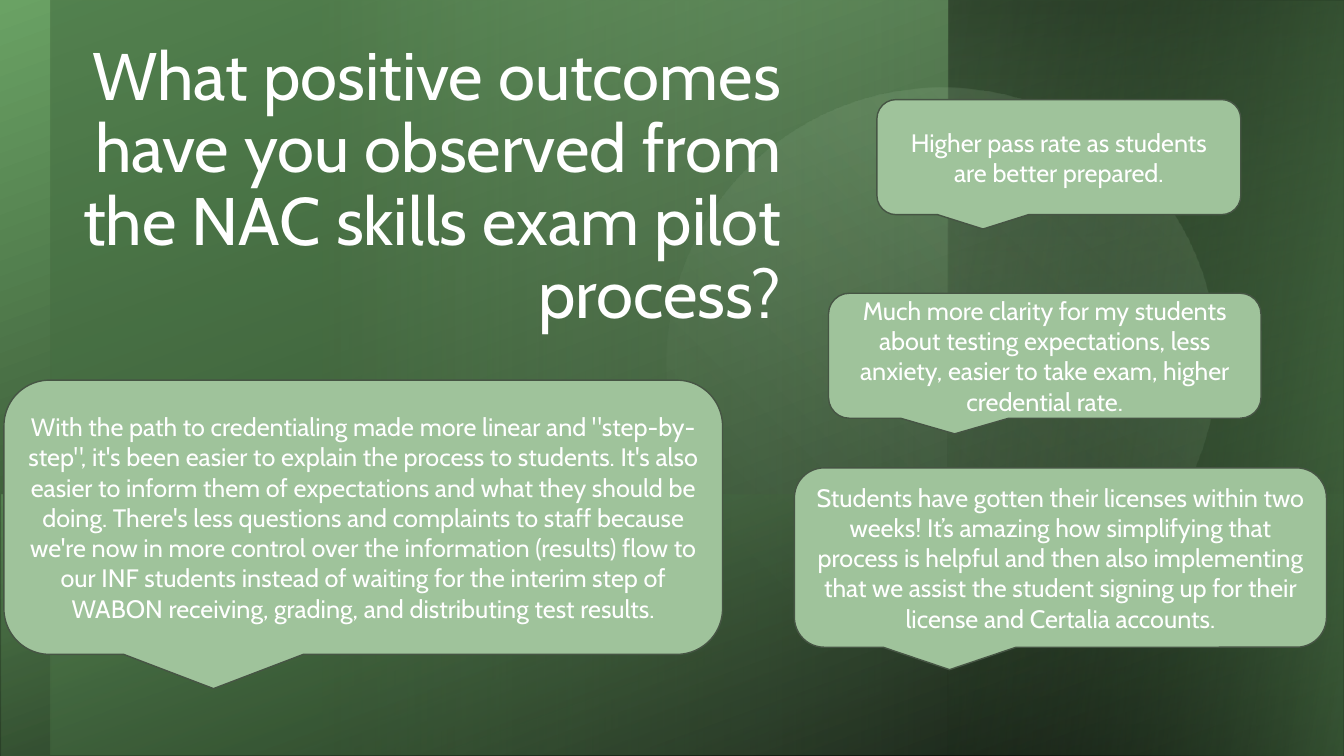
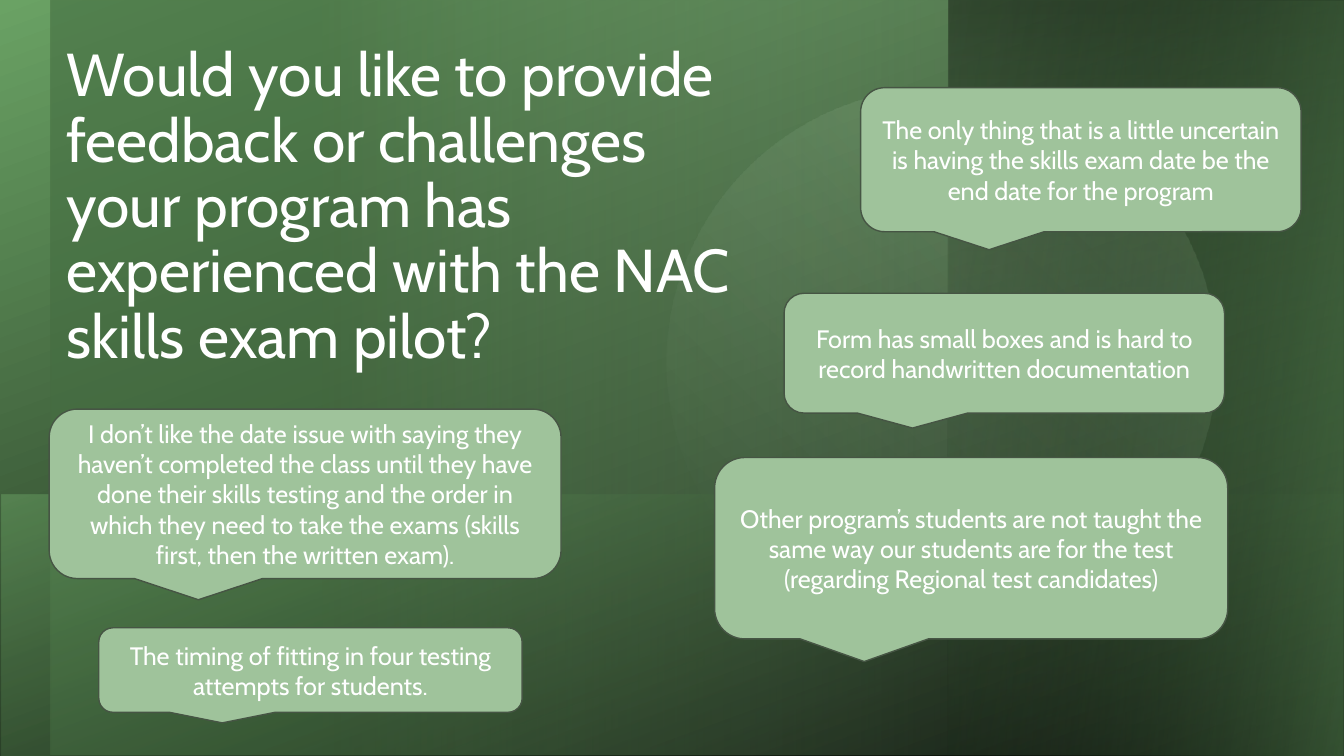
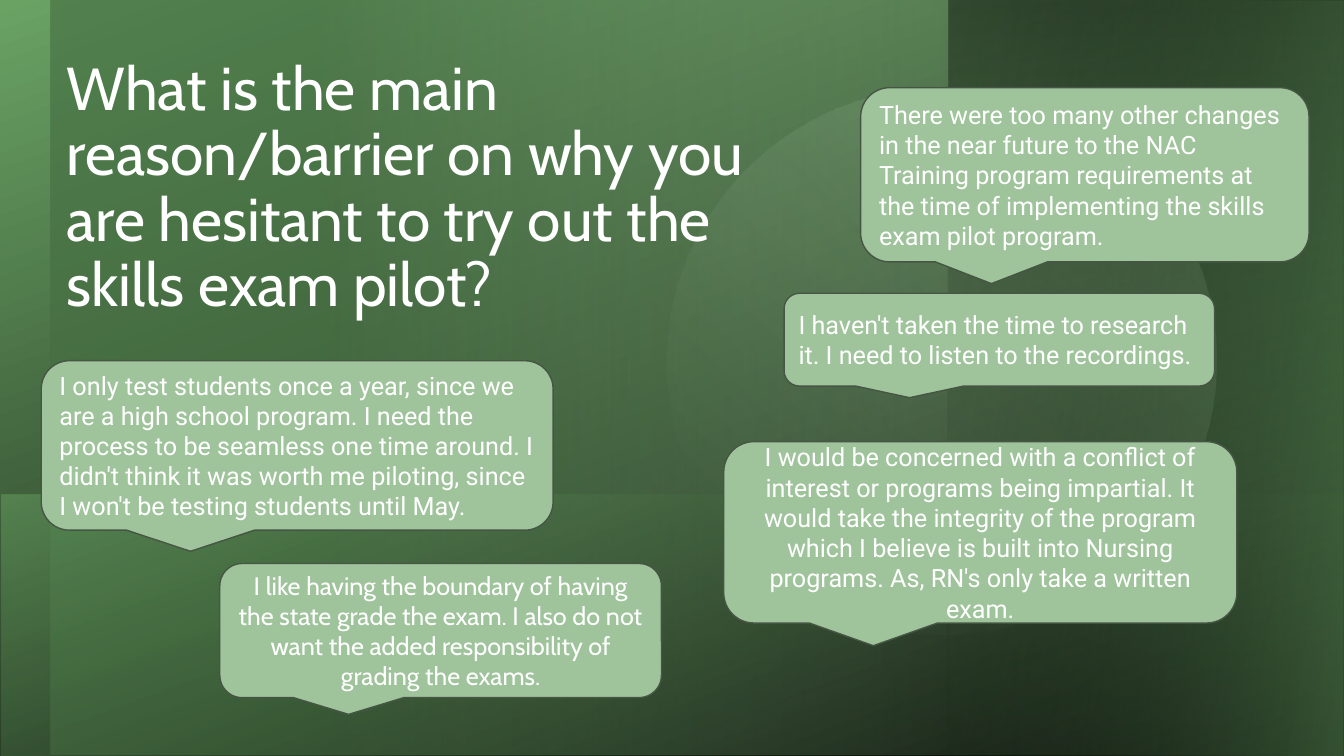
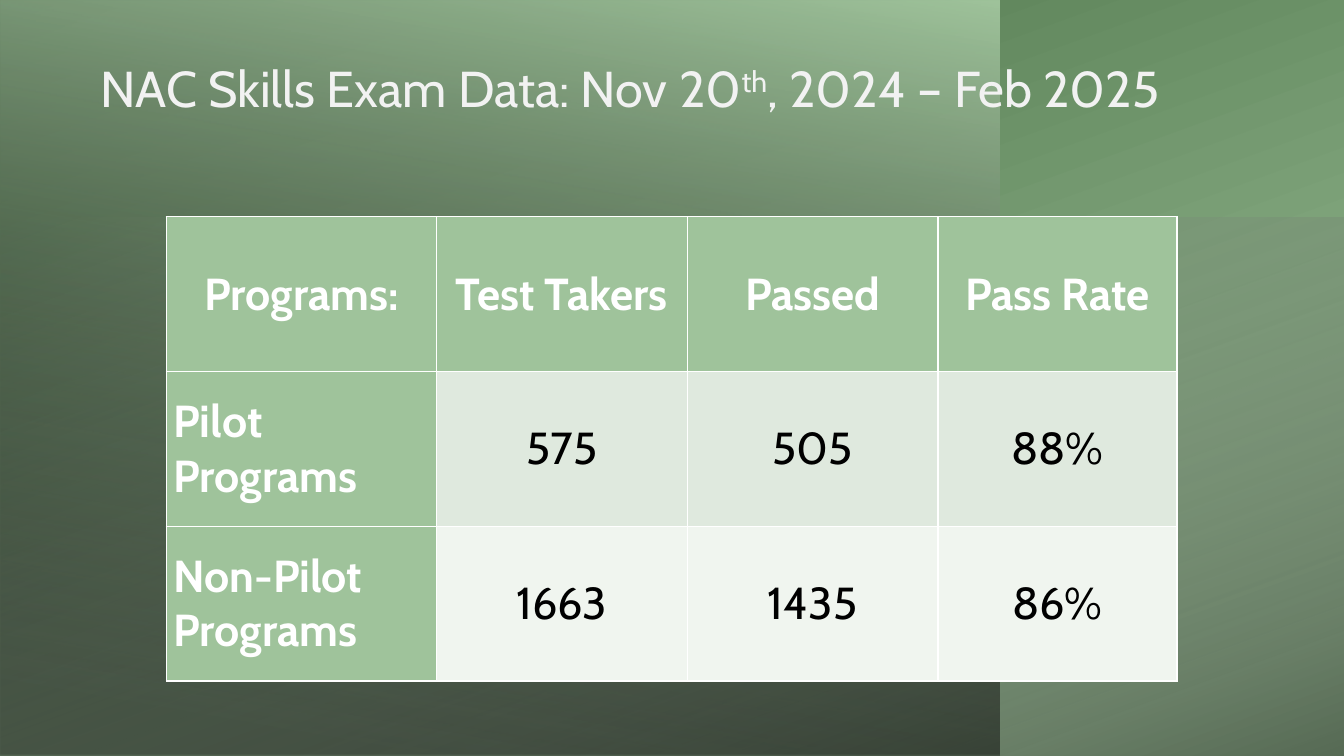
"""Build four slides on the results of the NAC skills exam pilot."""
from lxml import etree
from pptx import Presentation
from pptx.dml.color import RGBColor
from pptx.enum.shapes import MSO_SHAPE
from pptx.enum.text import MSO_ANCHOR, MSO_AUTO_SIZE, PP_ALIGN
from pptx.oxml.ns import qn
from pptx.util import Cm, Pt

RECT, OVAL = MSO_SHAPE.RECTANGLE, MSO_SHAPE.OVAL
BUBBLE = MSO_SHAPE.ROUNDED_RECTANGULAR_CALLOUT
LEFT, CENTER, RIGHT = PP_ALIGN.LEFT, PP_ALIGN.CENTER, PP_ALIGN.RIGHT
MIDDLE, BOTTOM = MSO_ANCHOR.MIDDLE, MSO_ANCHOR.BOTTOM

BLACK = RGBColor(0x00, 0x00, 0x00)
WHITE = RGBColor(0xFF, 0xFF, 0xFF)
SMOKE = RGBColor(0xF2, 0xF2, 0xF2)
SILVER = RGBColor(0xD9, 0xD9, 0xD9)
LEAF = RGBColor(0x6A, 0xA2, 0x64)
FOREST = RGBColor(0x46, 0x6D, 0x42)
SAGE = RGBColor(0x9F, 0xC3, 0x9B)
PALE = RGBColor(0xC5, 0xDB, 0xC3)
EDGE = RGBColor(0x46, 0x55, 0x44)
BANDS = [RGBColor(0xDF, 0xE9, 0xDE), RGBColor(0xF0, 0xF5, 0xEF)]
SANS, ROBOTO = "Cabin", "Roboto"

# Each panel: shape, box, turn, flip, angle, stops of (position, colour, opacity).
QUOTE_PANELS = [
    (RECT, (0, 0, 33.87, 19.05), 0, False, 250, [(0, BLACK, 100), (100, LEAF, 100)]),
    (RECT, (1.27, 0, 32.64, 19), 180, True, 0, [(21, FOREST, 61), (100, SAGE, 0)]),
    (RECT, (23.9, 0, 10.03, 19.05), 0, False, 270, [(0, LEAF, 0), (99, BLACK, 41)]),
    (OVAL, (16.84, 2.16, 13.79, 13.87), 254.6, False, 240, [(0, SAGE, 24), (79, PALE, 0)]),
    (RECT, (0.03, 12.45, 33.83, 6.6), 180, True, 290, [(0, LEAF, 50), (99, BLACK, 34)]),
    (RECT, (19.35, 4.55, 19.05, 9.98), 270, True, 260, [(0, LEAF, 50), (99, BLACK, 0)]),
]
DATA_PANELS = [
    (RECT, (7.42, -7.42, 19.05, 33.87), 270, True, 200, [(8, SAGE, 100), (100, FOREST, 100)]),
    (RECT, (0, 0, 25.2, 19.05), 180, True, 80, [(8, BLACK, 52), (100, SAGE, 100)]),
    (RECT, (10.13, -4.67, 13.59, 33.88), 270, True, 20, [(0, SILVER, 0), (100, BLACK, 46)]),
]

QUOTES = [
    ("What positive outcomes have you observed from the NAC skills exam pilot process?",
     (1.63, -0.56, 18.31, 9.07), 48, RIGHT, [
         ((22.1, 2.51, 9.17, 2.9), CENTER, SANS,
          "Higher pass rate as students are better prepared."),
         ((20.02, 11.79, 13.41, 4.52), CENTER, SANS,
          "Students have gotten their licenses within two weeks! It’s amazing how "
          "simplifying that process is helpful and then also implementing that we assist "
          "the student signing up for their license and Certalia accounts."),
         ((20.88, 7.39, 10.9, 3.15), CENTER, SANS,
          "Much more clarity for my students about testing expectations, less anxiety, "
          "easier to take exam, higher credential rate."),
         ((0.1, 9.58, 18.11, 6.91), CENTER, SANS,
          "With the path to credentialing made more linear and \"step-by-step\", it's been "
          "easier to explain the process to students. It's also easier to inform them of "
          "expectations and what they should be doing. There's less questions and "
          "complaints to staff because we're now in more control over the information "
          "(results) flow to our INF students instead of waiting for the interim step of "
          "WABON receiving, grading, and distributing test results."),
     ]),
    ("Would you like to provide feedback or challenges your program has experienced "
     "with the NAC skills exam pilot?",
     (1.42, 0.41, 18.31, 9.07), 43.2, LEFT, [
         ((21.69, 2.21, 11.1, 3.63), CENTER, SANS,
          "The only thing that is a little uncertain is having the skills exam date be "
          "the end date for the program"),
         ((19.76, 7.39, 11.1, 3.02), CENTER, SANS,
          "Form has small boxes and is hard to record handwritten documentation"),
         ((1.24, 10.31, 12.9, 4.27), CENTER, SANS,
          "I don’t like the date issue with saying they haven’t completed the class until "
          "they have done their skills testing and the order in which they need to take "
          "the exams (skills first, then the written exam)."),
         ((18.01, 11.53, 12.93, 4.57), CENTER, SANS,
          "Other program’s students are not taught the same way our students are for the "
          "test (regarding Regional test candidates)"),
         ((2.49, 15.82, 10.67, 2.13), CENTER, SANS,
          "The timing of fitting in four testing attempts for students."),
     ]),
    ("What is the main reason/barrier on why you are hesitant to try out the skills "
     "exam pilot?",
     (1.42, 0.41, 17.78, 7.77), 43.2, LEFT, [
         ((21.69, 2.21, 11.3, 4.39), LEFT, ROBOTO,
          "There were too many other changes in the near future to the NAC Training "
          "program requirements at the time of implementing the skills exam pilot "
          "program."),
         ((19.76, 7.39, 10.85, 2.34), LEFT, ROBOTO,
          "I haven't taken the time to research it. I need to listen to the recordings."),
         ((1.04, 9.09, 12.9, 4.27), LEFT, ROBOTO,
          "I only test students once a year, since we are a high school program. I need "
          "the process to be seamless one time around. I didn't think it was worth me "
          "piloting, since I won't be testing students until May."),
         ((18.24, 11.13, 12.93, 4.57), CENTER, ROBOTO,
          "I would be concerned with a conflict of interest or programs being impartial. "
          "It would take the integrity of the program which I believe is built into "
          "Nursing programs. As, RN's only take a written exam."),
         ((5.54, 14.2, 11.13, 3.38), CENTER, SANS,
          "I like having the boundary of having the state grade the exam. I also do not "
          "want the added responsibility of grading the exams."),
     ]),
]

ROWS = [
    ("Programs:", "Test Takers", "Passed", "Pass Rate"),
    ("Pilot Programs", "575", "505", "88%"),
    ("Non-Pilot Programs", "1663", "1435", "86%"),
]
WIDTHS = [6.81, 6.32, 6.32, 6.02]
HEIGHT = 3.9


def style(para, size, color, align, font=SANS):
    para.alignment = align
    para.font.name, para.font.size = font, Pt(size)
    para.font.color.rgb = color


def start(panels, box, size, color, align, anchor, parts):
    slide = prs.slides.add_slide(prs.slide_layouts[5])
    for kind, area, turn, flip, angle, stops in panels:
        panel = slide.shapes.add_shape(kind, *map(Cm, area))
        panel.shadow.inherit = False
        panel.line.fill.background()
        panel.rotation = turn
        if flip:
            panel.element.spPr.find(qn("a:xfrm")).set("flipH", "1")
        panel.fill.gradient()
        panel.fill.gradient_angle = (360 - angle) % 360
        for stop, (place, shade, alpha) in zip(panel.fill.gradient_stops, stops):
            stop.position = place / 100
            stop.color.rgb = shade
        for node, (place, shade, alpha) in zip(panel.element.spPr.iter(qn("a:srgbClr")), stops):
            if alpha < 100:
                etree.SubElement(node, qn("a:alpha")).set("val", str(alpha * 1000))
    title = slide.shapes.title
    title.element.getparent().append(title.element)
    title.left, title.top, title.width, title.height = map(Cm, box)
    frame = title.text_frame
    frame.auto_size, frame.word_wrap = MSO_AUTO_SIZE.NONE, True
    frame.vertical_anchor = anchor
    para = frame.paragraphs[0]
    para.line_spacing = 0.9
    style(para, size, color, align)
    for part in parts:
        para.add_run().text = part
    return slide


prs = Presentation()
prs.slide_width, prs.slide_height = Cm(33.87), Cm(19.05)

for head, box, size, align, notes in QUOTES:
    slide = start(QUOTE_PANELS, box, size, WHITE, align, BOTTOM, [head])
    for area, side, font, text in notes:
        note = slide.shapes.add_shape(BUBBLE, *map(Cm, area))
        note.shadow.inherit = False
        note.fill.solid()
        note.fill.fore_color.rgb = SAGE
        note.line.color.rgb = EDGE
        note.line.width = Pt(1)
        note.text_frame.text = text
        note.text_frame.vertical_anchor = MIDDLE
        style(note.text_frame.paragraphs[0], 18, WHITE, side, font)

slide = start(DATA_PANELS, (1.27, 0.81, 29.21, 3), 36, SMOKE, CENTER, MIDDLE,
              ["NAC Skills Exam Data: Nov 20", "th", ", 2024 – Feb 2025"])
raised = slide.shapes.title.text_frame.paragraphs[0].runs[1]
raised.font._element.set("baseline", "30000")

table = slide.shapes.add_table(len(ROWS), len(WIDTHS), Cm(4.19), Cm(5.46),
                               Cm(sum(WIDTHS)), Cm(HEIGHT * len(ROWS))).table
table.first_col = True
for column, width in zip(table.columns, WIDTHS):
    column.width = Cm(width)
for i, row in enumerate(ROWS):
    table.rows[i].height = Cm(HEIGHT)
    for j, text in enumerate(row):
        cell = table.cell(i, j)
        label = i == 0 or j == 0
        cell.fill.solid()
        cell.fill.fore_color.rgb = SAGE if label else BANDS[i - 1]
        cell.margin_left = cell.margin_right = Cm(0.18)
        cell.margin_top = cell.margin_bottom = 0
        cell.vertical_anchor = MIDDLE
        cell.text = text
        para = cell.text_frame.paragraphs[0]
        style(para, 32, WHITE if label else BLACK, LEFT if i and j == 0 else CENTER)
        para.font.bold = label

prs.save("out.pptx")
